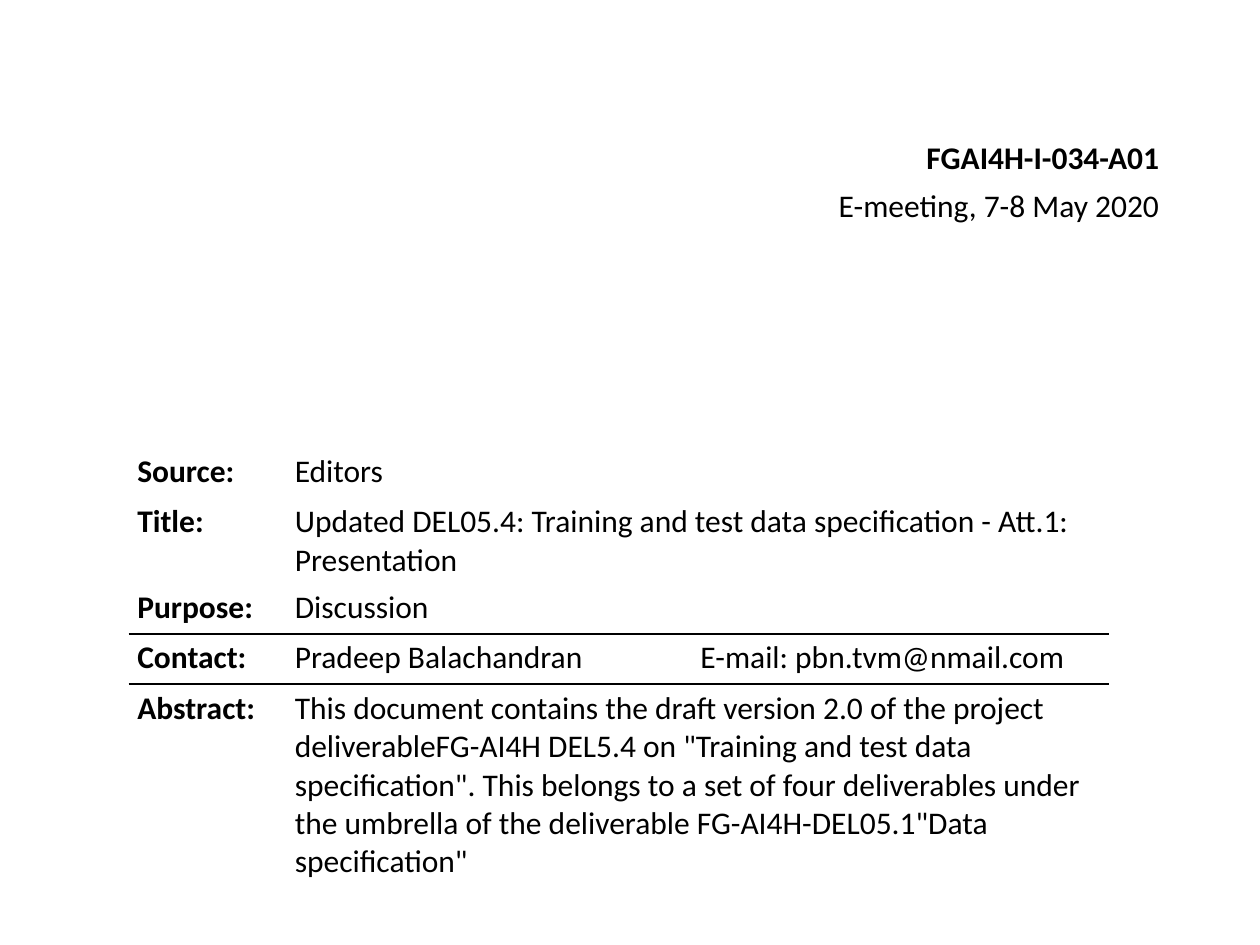
from dataclasses import dataclass

from lxml.etree import SubElement
from pptx import Presentation
from pptx.dml.color import RGBColor
from pptx.enum.text import MSO_AUTO_SIZE, PP_ALIGN
from pptx.oxml.ns import qn
from pptx.util import Inches, Pt

WIDE, HIGH = 10, 7.5


@dataclass(frozen=True)
class Theme:
    font: str = "Calibri"
    size: float = 18
    ink: str = "000000"
    rule: float = 1.5


@dataclass(frozen=True)
class Head:
    text: str
    left: float  # shares of the slide's size
    top: float
    width: float
    bold: bool = False


@dataclass(frozen=True)
class Row:
    label: str
    texts: tuple[str, ...]
    over: bool = False  # rule above
    under: bool = False  # rule below


THEME = Theme()
LINE = 0.4  # height of one line of text, in inches
COLS = (1.25, 3.22, 3.31)

HEADS = (
    Head("FGAI4H-I-034-A01", 0.72, 0.14, 0.21, True),
    Head("E-meeting, 7-8 May 2020", 0.65, 0.19, 0.28),
)

ROWS = (
    Row("Source:", ("Editors",)),
    Row("Title:", ("Updated DEL05.4: Training and test data specification"
                   " - Att.1: Presentation",)),
    Row("Purpose:", ("Discussion",), under=True),
    Row("Contact:", ("Pradeep Balachandran", "E-mail: pbn.tvm@nmail.com"),
        over=True, under=True),
    Row("Abstract:", (
        "This document contains the draft version 2.0 of the project "
        'deliverableFG-AI4H DEL5.4 on "Training and test data specification". '
        "This belongs to a set of four deliverables under the umbrella of the "
        'deliverable FG-AI4H-DEL05.1"Data specification"',), over=True),
)


def add_run(para, text: str, bold: bool = False) -> None:
    run = para.add_run()
    run.text = text
    font = run.font
    font.name, font.size, font.bold = THEME.font, Pt(THEME.size), bold
    font.color.rgb = RGBColor.from_string(THEME.ink)


def add_head(slide, head: Head) -> None:
    box = slide.shapes.add_textbox(
        Inches(head.left * WIDE), Inches(head.top * HIGH),
        Inches(head.width * WIDE), Inches(LINE))
    frame = box.text_frame
    frame.word_wrap = False
    frame.auto_size = MSO_AUTO_SIZE.SHAPE_TO_FIT_TEXT
    para = frame.paragraphs[0]
    para.alignment = PP_ALIGN.RIGHT
    add_run(para, head.text, head.bold)


def set_edges(cell, row: Row) -> None:
    """Draw the ruled edges and hide the others."""
    props = cell._tc.get_or_add_tcPr()
    edges = (("a:lnL", False), ("a:lnR", False),
             ("a:lnT", row.over), ("a:lnB", row.under))
    for spot, (tag, shown) in enumerate(edges):
        line = SubElement(props, qn(tag), w=str(Pt(THEME.rule)))
        if shown:
            fill = SubElement(line, qn("a:solidFill"))
            SubElement(fill, qn("a:srgbClr"), val=THEME.ink)
        else:
            SubElement(line, qn("a:noFill"))
        props.insert(spot, line)  # edges come before the fill


def add_grid(slide) -> None:
    grid = slide.shapes.add_table(
        len(ROWS), len(COLS), Inches(1.02), Inches(3.55),
        Inches(sum(COLS)), Inches(LINE * len(ROWS))).table
    grid.first_row = grid.horz_banding = False
    for col, width in zip(grid.columns, COLS):
        col.width = Inches(width)
    for at, row in enumerate(ROWS):
        grid.rows[at].height = Inches(LINE)
        for cell in grid.rows[at].cells:
            cell.fill.background()
            cell.margin_left = cell.margin_right = Inches(0.07)
            cell.margin_top = cell.margin_bottom = Inches(0.04)
            set_edges(cell, row)
        if len(row.texts) == 1:
            grid.cell(at, 1).merge(grid.cell(at, 2))
        for col, text in enumerate((row.label, *row.texts)):
            para = grid.cell(at, col).text_frame.paragraphs[0]
            add_run(para, text, bold=col == 0)


def main() -> None:
    deck = Presentation()
    deck.slide_width, deck.slide_height = Inches(WIDE), Inches(HIGH)
    slide = deck.slides.add_slide(deck.slide_layouts[6])
    # Document number and meeting
    for head in HEADS:
        add_head(slide, head)
    # Document details
    add_grid(slide)
    deck.save("out.pptx")


if __name__ == "__main__":
    main()
